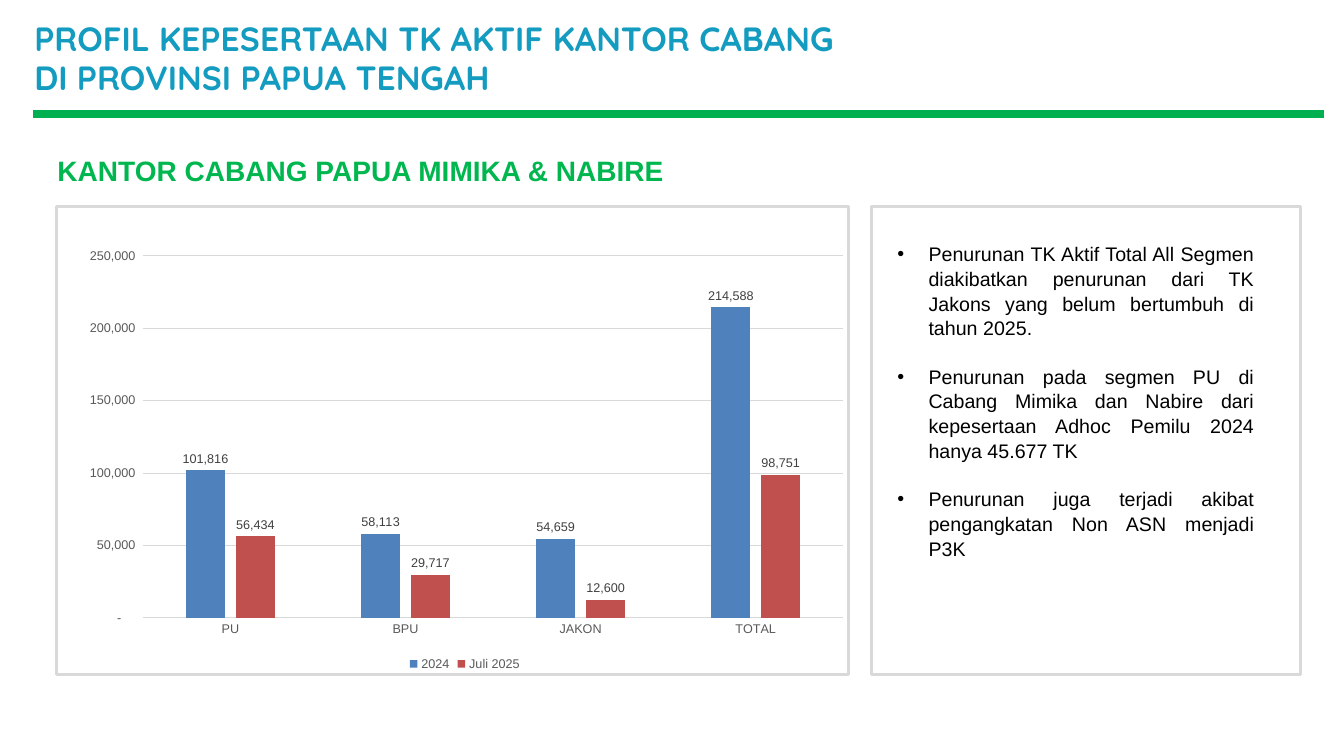
from pptx import Presentation
from pptx.chart.data import CategoryChartData as ChartData
from pptx.dml.color import RGBColor
from pptx.enum.chart import XL_CHART_TYPE as Kind, XL_LABEL_POSITION as Spot
from pptx.enum.chart import XL_LEGEND_POSITION as Side, XL_TICK_MARK as Tick
from pptx.enum.shapes import MSO_CONNECTOR as Link, MSO_SHAPE as Form
from pptx.enum.text import MSO_AUTO_SIZE as Fit, PP_ALIGN as Align
from pptx.oxml.ns import qn
from pptx.util import Inches, Pt
from lxml.etree import SubElement as sub

BLACK = RGBColor(0x00, 0x00, 0x00)
TEAL = RGBColor(0x14, 0x9B, 0xC0)
GREEN = RGBColor(0x00, 0xB7, 0x4F)
RULE = RGBColor(0x00, 0xB0, 0x50)
PALE = RGBColor(0xD9, 0xD9, 0xD9)
GRAY = RGBColor(0x59, 0x59, 0x59)
DARK = RGBColor(0x40, 0x40, 0x40)
BLUE = RGBColor(0x4F, 0x81, 0xBD)
RED = RGBColor(0xC0, 0x50, 0x4D)

FORMAT = '_-* #,##0_-;\\-* #,##0_-;_-* "-"??_-;_-@_'
GROUPS = ["PU", "BPU", "JAKON", "TOTAL"]
SERIES = [
    ("2024", [101816, 58113, 54659, 214588], BLUE),
    ("Juli 2025", [56434, 29717, 12600, 98751], RED),
]
TITLE = [
    "PROFIL KEPESERTAAN TK AKTIF KANTOR CABANG",
    "DI PROVINSI PAPUA TENGAH",
]
NOTES = [
    "Penurunan TK Aktif Total All Segmen diakibatkan penurunan dari TK "
    "Jakons yang belum bertumbuh di tahun 2025.",
    "Penurunan pada segmen PU di Cabang Mimika dan Nabire dari "
    "kepesertaan Adhoc Pemilu 2024 hanya 45.677 TK",
    "Penurunan juga terjadi akibat pengangkatan Non ASN menjadi P3K",
]


def style(font, size, color, name="Arial", bold=False):
    font.size = Pt(size)
    font.color.rgb = color
    font.name = name
    font.bold = bold


def add_rule(slide, left, right, top):
    line = slide.shapes.add_connector(
        Link.STRAIGHT, Inches(left), Inches(top), Inches(right), Inches(top))
    line.line.color.rgb = RULE
    line.line.width = Pt(6)
    sub(line._element.spPr, qn("a:effectLst"))


def add_frame(slide, left, width):
    frame = slide.shapes.add_shape(
        Form.RECTANGLE, Inches(left), Inches(2.05), Inches(width), Inches(4.64))
    frame.shadow.inherit = False
    frame.fill.background()
    frame.line.color.rgb = PALE
    frame.line.width = Pt(2)


def set_bullet(para):
    props = para._p.get_or_add_pPr()
    props.set("marL", str(Inches(0.33)))
    props.set("indent", str(Inches(-0.31)))
    sub(props, qn("a:buFont")).set("typeface", "Arial")
    sub(props, qn("a:buChar")).set("char", "•")


def add_text(slide, box, lines, look, space=1.0, bullet=False):
    shape = slide.shapes.add_textbox(*map(Inches, box))
    frame = shape.text_frame
    frame.word_wrap = True
    frame.auto_size = Fit.SHAPE_TO_FIT_TEXT
    frame.margin_left = frame.margin_right = frame.margin_bottom = 0
    frame.margin_top = Inches(0.01)
    frame.text = "\n".join(lines)
    for index, para in enumerate(frame.paragraphs):
        para.line_spacing = space
        if bullet:
            para.alignment = Align.JUSTIFY
            if index:
                para.space_before = Pt(17)
            set_bullet(para)
        else:
            para._p.get_or_add_pPr().set("marL", str(Inches(0.01)))
        for run in para.runs:
            style(run.font, *look)


def style_axes(chart):
    for axis in (chart.category_axis, chart.value_axis):
        axis.major_tick_mark = axis.minor_tick_mark = Tick.NONE
        style(axis.tick_labels.font, 9, GRAY)
    base, scale = chart.category_axis, chart.value_axis
    base.format.line.color.rgb = PALE
    base.format.line.width = Pt(0.75)
    scale.format.line.fill.background()
    scale.has_major_gridlines = True
    scale.major_gridlines.format.line.color.rgb = PALE
    scale.major_gridlines.format.line.width = Pt(0.75)
    scale.tick_labels.number_format = FORMAT
    scale.tick_labels.number_format_is_linked = False


def style_bars(plot):
    plot.gap_width = 219
    plot.overlap = -27
    plot.vary_by_categories = False
    for bars, (_, _, color) in zip(plot.series, SERIES):
        bars.format.fill.solid()
        bars.format.fill.fore_color.rgb = color
        labels = bars.data_labels
        labels.show_value = True
        labels.position = Spot.OUTSIDE_END
        labels.number_format = FORMAT
        labels.number_format_is_linked = False
        style(labels.font, 9, DARK)


def add_bars(slide):
    data = ChartData(number_format=FORMAT)
    data.categories = GROUPS
    for name, values, _ in SERIES:
        data.add_series(name, values)
    chart = slide.shapes.add_chart(
        Kind.COLUMN_CLUSTERED, Inches(0.7), Inches(2.38),
        Inches(7.82), Inches(4.32), data).chart
    style(chart.font, 10, BLACK)
    chart.has_title = False
    chart.has_legend = True
    chart.legend.position = Side.BOTTOM
    chart.legend.include_in_layout = False
    style(chart.legend.font, 9, GRAY)
    style_axes(chart)
    style_bars(chart.plots[0])


def main():
    deck = Presentation()
    deck.slide_width = Inches(13.33)
    deck.slide_height = Inches(7.5)
    slide = deck.slides.add_slide(deck.slide_layouts[6])
    add_rule(slide, 0.33, 13.13, 1.13)
    add_text(slide, (0.56, 1.51, 6.96, 0.35),
             ["KANTOR CABANG PAPUA MIMIKA & NABIRE"],
             (20, GREEN, "Arial", True))
    add_frame(slide, 0.56, 7.86)
    add_text(slide, (8.88, 2.38, 3.56, 3.08), NOTES, (14, BLACK),
             space=1.05, bullet=True)
    add_frame(slide, 8.64, 4.26)
    add_bars(slide)
    add_text(slide, (0.33, 0.2, 8.32, 0.82), TITLE,
             (24, TEAL, "Quicksand", True), space=0.95)
    deck.save("out.pptx")


if __name__ == "__main__":
    main()
